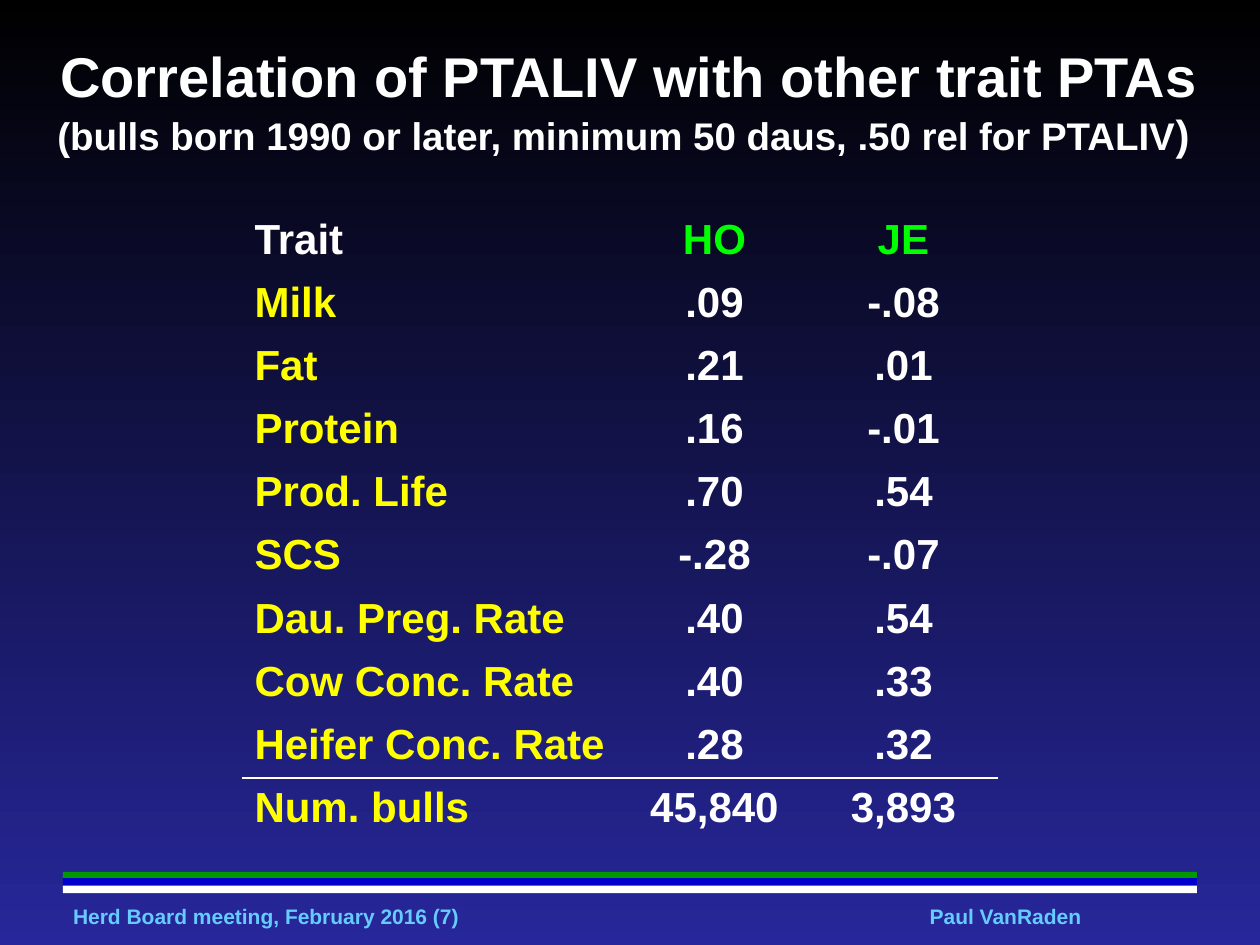
from typing import NamedTuple

from lxml import etree
from pptx import Presentation
from pptx.dml.color import RGBColor
from pptx.enum.shapes import MSO_SHAPE
from pptx.enum.text import MSO_ANCHOR, PP_ALIGN
from pptx.oxml.ns import qn
from pptx.util import Inches, Pt

LEFT, CENTER = PP_ALIGN.LEFT, PP_ALIGN.CENTER
MIDDLE = MSO_ANCHOR.MIDDLE
RECTANGLE = MSO_SHAPE.RECTANGLE

FONT = "Arial"
WHITE, YELLOW, GREEN, SKY = "FFFFFF", "FFFF00", "00FF00", "66CCFF"
PLAIN_TABLE_STYLE = "{2D5ABB26-0587-4C30-8999-92F81FD0307C}"


class TraitRow(NamedTuple):
    trait: str
    holstein: str
    jersey: str


class Footer(NamedTuple):
    text: str
    left: float
    width: float
    align: PP_ALIGN
    wrap: bool


ROWS = [
    TraitRow("Trait", "HO", "JE"),
    TraitRow("Milk", ".09", "-.08"),
    TraitRow("Fat", ".21", ".01"),
    TraitRow("Protein", ".16", "-.01"),
    TraitRow("Prod. Life", ".70", ".54"),
    TraitRow("SCS", "-.28", "-.07"),
    TraitRow("Dau. Preg. Rate", ".40", ".54"),
    TraitRow("Cow Conc. Rate", ".40", ".33"),
    TraitRow("Heifer Conc. Rate", ".28", ".32"),
    TraitRow("Num. bulls", "45,840", "3,893"),
]
COLUMN_WIDTHS = [3, 1.5, 1.5]
ROW_HEIGHT = 0.5

FOOTERS = [
    Footer("Herd Board meeting, February 2016 (7)", 0.58, 4.72, LEFT, True),
    Footer("Paul VanRaden", 7.37, 1.22, CENTER, False),
]
STRIPES = ["009900", "0000CC", WHITE]
STRIPE_TOPS = [6.92, 6.97, 7.03]


def rgb(value: str) -> RGBColor:
    return RGBColor.from_string(value)


def add_span(para, text: str, *, size: float, color: str = WHITE) -> None:
    """Append bold text to a paragraph."""
    span = para.add_run()
    span.text = text
    span.font.name = FONT
    span.font.size = Pt(size)
    span.font.bold = True
    span.font.color.rgb = rgb(color)


def paint_background(page) -> None:
    fill = page.background.fill
    fill.gradient()
    fill.gradient_angle = 270
    for stop, color in zip(fill.gradient_stops, ["000000", "27279B"]):
        stop.color.rgb = rgb(color)


def add_title(page) -> None:
    box = page.shapes.add_textbox(Inches(0.08), Inches(0.17), Inches(9.83), Inches(1.25))
    frame = box.text_frame
    frame.word_wrap = True
    frame.vertical_anchor = MIDDLE
    para = frame.paragraphs[0]
    para.alignment = CENTER
    add_span(para, "Correlation of PTALIV with other trait PTAs ", size=32)
    add_span(para, "(bulls born 1990 or later, minimum 50 daus, .50 rel for PTALIV", size=22)
    add_span(para, ") ", size=24)


def add_footer(page, footer: Footer) -> None:
    box = page.shapes.add_textbox(
        Inches(footer.left), Inches(7.17), Inches(footer.width), Inches(0.2))
    frame = box.text_frame
    frame.margin_left = frame.margin_right = frame.margin_top = frame.margin_bottom = 0
    frame.word_wrap = footer.wrap
    frame.vertical_anchor = MIDDLE
    para = frame.paragraphs[0]
    para.alignment = footer.align
    add_span(para, footer.text, size=12, color=SKY)


def add_stripes(page) -> None:
    for top, color in zip(STRIPE_TOPS, STRIPES):
        stripe = page.shapes.add_shape(
            RECTANGLE, Inches(0.5), Inches(top), Inches(9), Inches(0.06))
        stripe.shadow.inherit = False
        stripe.fill.solid()
        stripe.fill.fore_color.rgb = rgb(color)
        stripe.line.fill.background()


def add_border(cell, side: str) -> None:
    """Draw a thin white line on one side, 'lnT' or 'lnB', of a cell."""
    line = etree.Element(qn(f"a:{side}"), w=str(Pt(1)))
    fill = etree.SubElement(line, qn("a:solidFill"))
    etree.SubElement(fill, qn("a:srgbClr"), val=WHITE)
    cell._tc.get_or_add_tcPr().insert(0, line)


def text_color(row: int, column: int) -> str:
    if row == 0:
        return GREEN if column else WHITE
    return WHITE if column else YELLOW


def add_trait_table(page) -> None:
    table = page.shapes.add_table(
        len(ROWS), len(COLUMN_WIDTHS), Inches(1.92), Inches(1.67),
        Inches(sum(COLUMN_WIDTHS)), Inches(ROW_HEIGHT * len(ROWS))).table
    table.first_row = table.horz_banding = False
    table._tbl.tblPr.find(qn("a:tableStyleId")).text = PLAIN_TABLE_STYLE
    for column, width in zip(table.columns, COLUMN_WIDTHS):
        column.width = Inches(width)

    total_row = len(ROWS) - 1
    for r, row in enumerate(ROWS):
        for c, text in enumerate(row):
            cell = table.cell(r, c)
            cell.fill.background()
            para = cell.text_frame.paragraphs[0]
            para.alignment = CENTER if c else LEFT
            add_span(para, text, size=24, color=text_color(r, c))
            if r == total_row - 1:
                add_border(cell, "lnB")
            elif r == total_row:
                add_border(cell, "lnT")


def main() -> None:
    deck = Presentation()
    deck.slide_width, deck.slide_height = Inches(10), Inches(7.5)
    page = deck.slides.add_slide(deck.slide_layouts[6])
    paint_background(page)
    for footer in FOOTERS:
        add_footer(page, footer)
    add_stripes(page)
    add_trait_table(page)
    add_title(page)
    deck.save("out.pptx")


if __name__ == "__main__":
    main()
